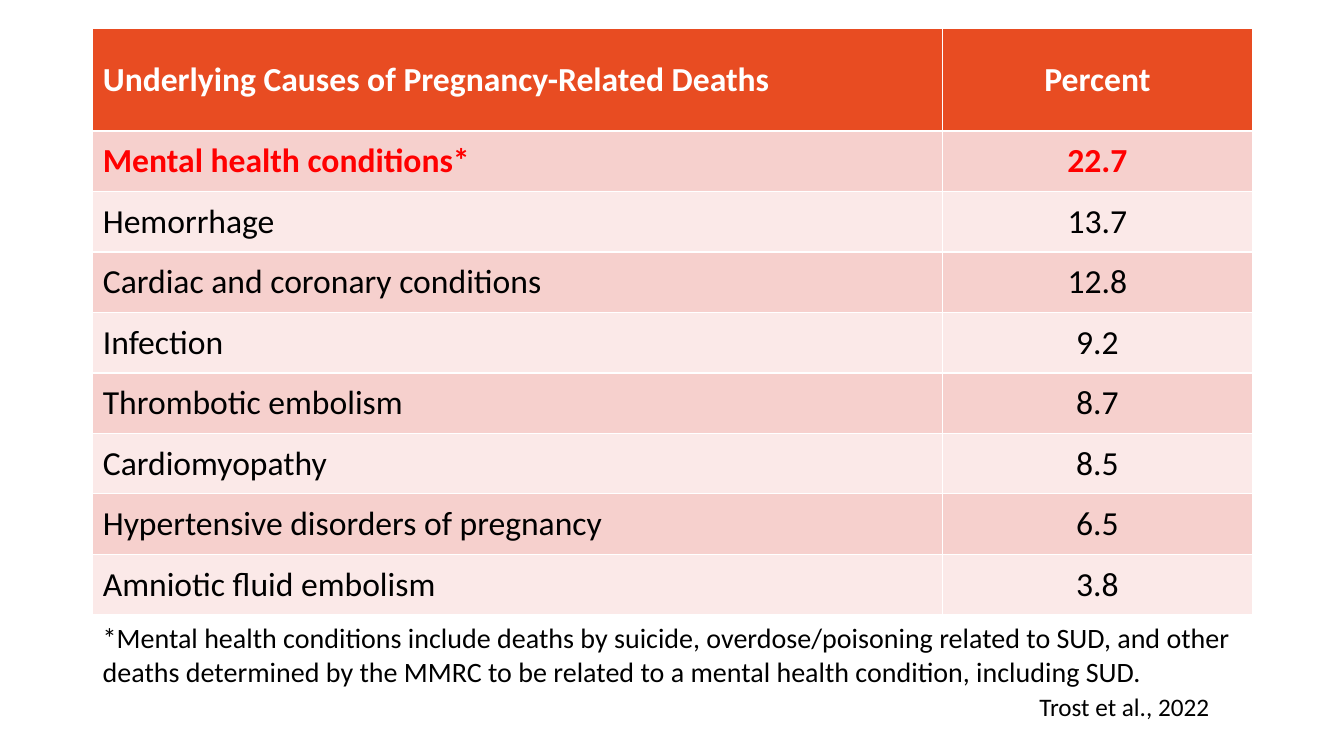
import dataclasses

import pptx
import pptx.dml.color
import pptx.enum.text
import pptx.util

PX = 9144
FACE = "Calibri"
LEFT, TOP, WIDE = 92, 28, 1150
COLS = (843, 307)
HEAD, ROW = 102, 60
BANDS = ("F6D0CD", "FBE9E8")


@dataclasses.dataclass
class Cause:
    name: str
    rate: str
    fill: str
    ink: str = "000000"
    bold: bool = False


@dataclasses.dataclass
class Note:
    text: str
    left: int
    top: int
    wide: int
    high: int
    size: int


CAUSES = [
    ("Hemorrhage", "13.7"),
    ("Cardiac and coronary conditions", "12.8"),
    ("Infection", "9.2"),
    ("Thrombotic embolism", "8.7"),
    ("Cardiomyopathy", "8.5"),
    ("Hypertensive disorders of pregnancy", "6.5"),
    ("Amniotic fluid embolism", "3.8"),
]

ROWS = [
    Cause("Underlying Causes of Pregnancy-Related Deaths", "Percent",
          "E84C22", "FFFFFF", True),
    Cause("Mental health conditions*", "22.7", BANDS[0], "FF0000", True),
] + [Cause(name, rate, BANDS[i % 2]) for i, (name, rate) in enumerate(CAUSES, 1)]

NOTES = [
    Note("*Mental health conditions include deaths by suicide, overdose/poisoning "
         "related to SUD, and other deaths determined by the MMRC to be related to "
         "a mental health condition, including SUD.", LEFT, 611, WIDE, 111, 20),
    Note("Trost et al., 2022", 1021, 681, 247, 40, 18),
]


def px(count: int) -> pptx.util.Emu:
    return pptx.util.Emu(count * PX)


def tint(code: str) -> pptx.dml.color.RGBColor:
    return pptx.dml.color.RGBColor.from_string(code)


def style(para, size: int, ink: str, bold: bool = False) -> None:
    form = {"name": FACE, "size": pptx.util.Pt(size), "bold": bold}
    for key, value in form.items():
        setattr(para.font, key, value)
    para.font.color.rgb = tint(ink)


def draw_table(slide, rows: list[Cause]) -> None:
    high = HEAD + ROW * (len(rows) - 1)
    table = slide.shapes.add_table(
        len(rows), len(COLS), px(LEFT), px(TOP), px(WIDE), px(high)).table
    for col, wide in zip(table.columns, COLS):
        col.width = px(wide)
    aligns = (pptx.enum.text.PP_ALIGN.LEFT, pptx.enum.text.PP_ALIGN.CENTER)
    for i, cause in enumerate(rows):
        table.rows[i].height = px(ROW if i else HEAD)
        for j, text in enumerate((cause.name, cause.rate)):
            cell = table.cell(i, j)
            cell.text = text
            cell.vertical_anchor = pptx.enum.text.MSO_ANCHOR.MIDDLE
            cell.fill.solid()
            cell.fill.fore_color.rgb = tint(cause.fill)
            para = cell.text_frame.paragraphs[0]
            para.alignment = aligns[j]
            style(para, 24, cause.ink, cause.bold)


def draw_note(slide, note: Note) -> None:
    box = slide.shapes.add_textbox(
        px(note.left), px(note.top), px(note.wide), px(note.high))
    frame = box.text_frame
    frame.word_wrap = True
    frame.text = note.text
    style(frame.paragraphs[0], note.size, "000000")


def main() -> None:
    deck = pptx.Presentation()
    deck.slide_width, deck.slide_height = px(1333), px(750)
    slide = deck.slides.add_slide(deck.slide_layouts[6])
    draw_table(slide, ROWS)
    for note in NOTES:
        draw_note(slide, note)
    deck.save("out.pptx")


if __name__ == "__main__":
    main()
